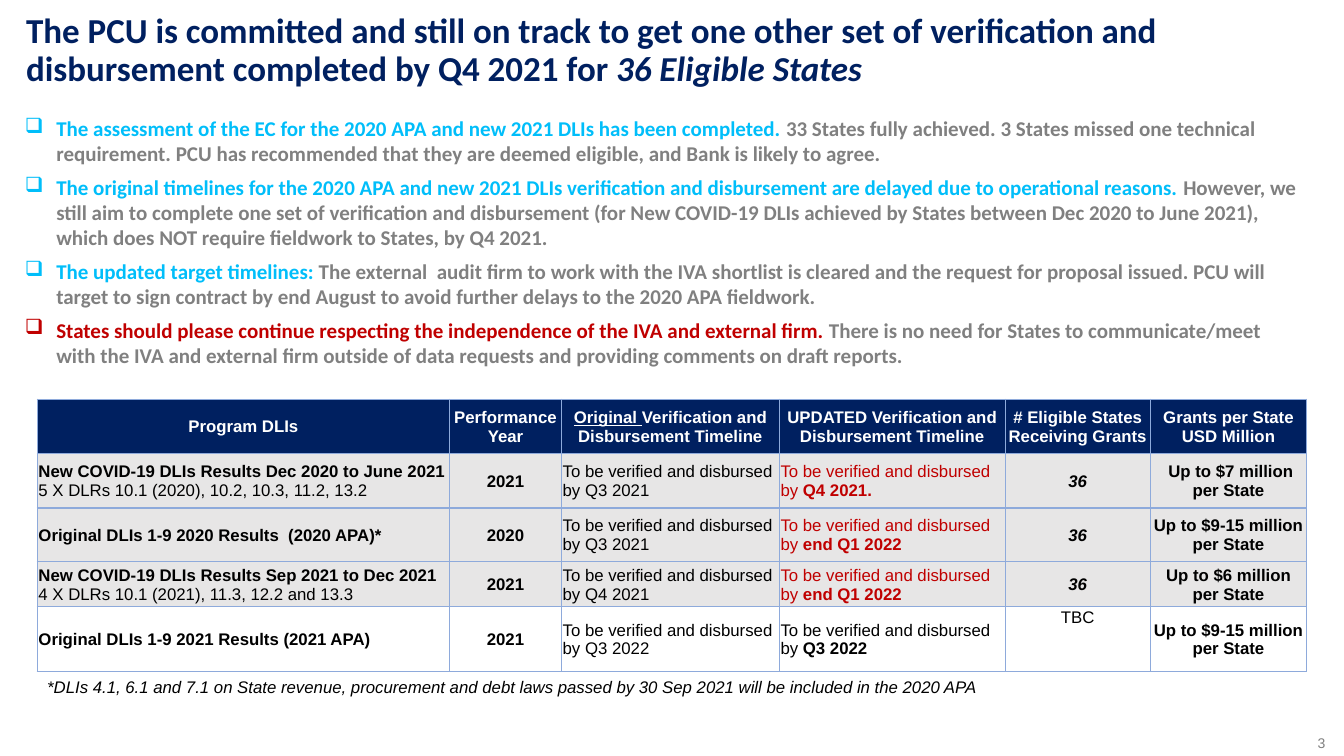
"""Builds the slide on verification and disbursement timelines for eligible States."""
from dataclasses import dataclass
from typing import NamedTuple

from lxml.etree import SubElement
from pptx import Presentation
from pptx.dml.color import RGBColor
from pptx.enum.text import MSO_ANCHOR, MSO_AUTO_SIZE, PP_ALIGN
from pptx.oxml.ns import qn
from pptx.util import Cm, Pt


@dataclass(frozen=True)
class Theme:
    navy: str = "002060"
    sky: str = "00BEFA"
    red: str = "C00000"
    gray: str = "808080"
    black: str = "000000"
    white: str = "FFFFFF"
    band: str = "E7E6E6"
    rule: str = "8EAADB"
    head: str = "Calibri"
    body: str = "Arial"
    title: float = 25
    point: float = 15
    small: float = 12
    page: float = 10


class Run(NamedTuple):
    text: str
    color: str | None = None
    bold: bool | None = None
    italic: bool | None = None
    under: bool | None = None


class Style(NamedTuple):
    font: str
    size: float
    color: str
    bold: bool = False
    italic: bool = False
    align: PP_ALIGN = PP_ALIGN.LEFT


class Box(NamedTuple):
    left: float
    top: float
    width: float
    height: float


class Point(NamedTuple):
    lead: str
    rest: str
    color: str


class Row(NamedTuple):
    name: str
    detail: str
    year: str
    first: str
    update: str
    tint: str
    count: str
    grant: str
    fill: str | None


THEME = Theme()
MARGIN = 0.03
WIDTHS = (10.39, 2.82, 5.49, 5.69, 3.66, 3.94)
HEIGHTS = (1.37, 1.37, 1.35, 1.14, 1.63)
DUE = "To be verified and disbursed by "
HEADS = (
    [Run("Program DLIs")],
    [Run("Performance Year")],
    [Run("Original ", under=True), Run("Verification and Disbursement Timeline")],
    [Run("UPDATED Verification and Disbursement Timeline")],
    [Run("# Eligible States Receiving Grants")],
    [Run("Grants per State USD Million")],
)
ROWS = (
    Row("New COVID-19 DLIs Results Dec 2020 to June 2021",
        "5 X DLRs 10.1 (2020), 10.2, 10.3, 11.2, 13.2", "2021", "Q3 2021",
        "Q4 2021.", THEME.red, "36", " Up to $7 million per State", THEME.band),
    Row("Original DLIs 1-9 2020 Results  (2020 APA)*", "", "2020", "Q3 2021",
        "end Q1 2022", THEME.red, "36", "Up to $9-15 million per State", THEME.band),
    Row("New COVID-19 DLIs Results Sep 2021 to Dec 2021",
        "4 X DLRs 10.1 (2021), 11.3, 12.2 and 13.3", "2021", "Q4 2021",
        "end Q1 2022", THEME.red, "36", "Up to $6 million per State", THEME.band),
    Row("Original DLIs 1-9 2021 Results (2021 APA)", "", "2021", "Q3 2022",
        "Q3 2022", THEME.black, "TBC", "Up to $9-15 million per State", None),
)
POINTS = (
    Point("The assessment of the EC for the 2020 APA and new 2021 DLIs has been completed.",
          " 33 States fully achieved. 3 States missed one technical requirement. PCU has "
          "recommended that they are deemed eligible, and Bank is likely to agree.", THEME.sky),
    Point("The original timelines for the 2020 APA and new 2021 DLIs verification and "
          "disbursement are delayed due to operational reasons. ",
          "However, we still aim to complete one set of verification and disbursement (for New "
          "COVID-19 DLIs achieved by States between Dec 2020 to June 2021), which does NOT "
          "require fieldwork to States, by Q4 2021.", THEME.sky),
    Point("The updated target timelines: ",
          "The external  audit firm to work with the IVA shortlist is cleared and the request "
          "for proposal issued. PCU will target to sign contract by end August to avoid further "
          "delays to the 2020 APA fieldwork.", THEME.sky),
    Point("States should please continue respecting the independence of the IVA and external firm.",
          " There is no need for States to communicate/meet with the IVA and external firm "
          "outside of data requests and providing comments on draft reports.", THEME.red),
)


def write(para, runs: list[Run], style: Style) -> None:
    para.alignment = style.align
    font = para.font
    font.name, font.size = style.font, Pt(style.size)
    font.bold, font.italic = style.bold, style.italic
    font.color.rgb = RGBColor.from_string(style.color)
    for item in runs:
        if item.text == "\n":
            para.add_line_break()
            continue
        run = para.add_run()
        run.text = item.text
        run.font.bold, run.font.italic = item.bold, item.italic
        run.font.underline = item.under
        if item.color:
            run.font.color.rgb = RGBColor.from_string(item.color)


def place(shape, box: Box) -> None:
    shape.left, shape.top, shape.width, shape.height = map(Cm, box)


def inset(frame, size: float) -> None:
    frame.margin_left = frame.margin_right = Cm(size)
    frame.margin_top = frame.margin_bottom = Cm(size)


def add_text(slide, box: Box):
    frame = slide.shapes.add_textbox(*map(Cm, box)).text_frame
    frame.word_wrap = True
    return frame


def add_title(slide) -> None:
    shape = slide.shapes.title
    place(shape, Box(0.66, 0.33, 32.82, 1.93))
    frame = shape.text_frame
    frame.auto_size = MSO_AUTO_SIZE.NONE
    frame.vertical_anchor = MSO_ANCHOR.TOP
    inset(frame, 0)
    para = frame.paragraphs[0]
    para.line_spacing = 0.9
    write(para, [Run("The PCU is committed and still on track to get one other set of "
                     "verification and disbursement completed by Q4 2021 for "),
                 Run("36 Eligible States", italic=True)],
          Style(THEME.head, THEME.title, THEME.navy, True))


def add_points(slide) -> None:
    frame = add_text(slide, Box(0.38, 2.79, 32.54, 6.73))
    for index, point in enumerate(POINTS):
        para = frame.add_paragraph() if index else frame.paragraphs[0]
        props = para._p.get_or_add_pPr()
        props.set("marL", str(Cm(0.79)))
        props.set("indent", str(-Cm(0.79)))
        SubElement(props, qn("a:buChar"), char="❑")
        para.space_after = Pt(6)
        write(para, [Run(point.lead, point.color), Run(point.rest)],
              Style(THEME.head, THEME.point, THEME.gray, True))


def add_rules(cell) -> None:
    props = cell._tc.get_or_add_tcPr()
    for index, side in enumerate(("lnL", "lnR", "lnT", "lnB")):
        line = SubElement(props, qn(f"a:{side}"), w=str(Pt(1)))
        SubElement(SubElement(line, qn("a:solidFill")), qn("a:srgbClr"), val=THEME.rule)
        props.insert(index, line)


def fill_cell(cell, runs: list[Run], style: Style, fill: str | None) -> None:
    inset(cell, MARGIN)
    cell.margin_bottom = 0
    cell.vertical_anchor = MSO_ANCHOR.MIDDLE
    if fill:
        cell.fill.solid()
        cell.fill.fore_color.rgb = RGBColor.from_string(fill)
    else:
        cell.fill.background()
    add_rules(cell)
    write(cell.text_frame.paragraphs[0], runs, style)


def row_runs(row: Row) -> tuple[list[Run], ...]:
    name = [Run(row.name, bold=True)]
    if row.detail:
        name += [Run("\n"), Run(row.detail)]
    known = row.count.isdigit()
    return (name, [Run(row.year, bold=True)], [Run(DUE + row.first)],
            [Run(DUE, row.tint), Run(row.update, row.tint, True)],
            [Run(row.count, bold=known, italic=known)], [Run(row.grant, bold=True)])


def add_grid(slide) -> None:
    frame = slide.shapes.add_table(len(HEIGHTS), len(WIDTHS), Cm(0.94), Cm(10.06),
                                   Cm(sum(WIDTHS)), Cm(sum(HEIGHTS)))
    table = frame.table
    table.first_row = table.horz_banding = False
    for column, width in zip(table.columns, WIDTHS):
        column.width = Cm(width)
    for line, height in zip(table.rows, HEIGHTS):
        line.height = Cm(height)
    center = PP_ALIGN.CENTER
    head = Style(THEME.body, THEME.small, THEME.white, True, align=center)
    plain = Style(THEME.body, THEME.small, THEME.black)
    for col, runs in enumerate(HEADS):
        fill_cell(table.cell(0, col), runs, head, THEME.navy)
    for index, row in enumerate(ROWS, 1):
        for col, runs in enumerate(row_runs(row)):
            style = plain if col in (0, 2, 3) else plain._replace(align=center)
            fill_cell(table.cell(index, col), runs, style, row.fill)
    table.cell(len(ROWS), 4).vertical_anchor = MSO_ANCHOR.TOP


def main() -> None:
    deck = Presentation()
    deck.slide_width, deck.slide_height = Cm(33.87), Cm(19.05)
    slide = deck.slides.add_slide(deck.slide_layouts[5])
    add_title(slide)
    add_points(slide)
    add_grid(slide)
    note = add_text(slide, Box(0.94, 16.92, 30.96, 0.76))
    write(note.paragraphs[0],
          [Run("*DLIs 4.1, 6.1 and 7.1 on State revenue, procurement and debt laws passed by "
               "30 Sep 2021 will be included in the 2020 APA")],
          Style(THEME.body, THEME.small, THEME.black, italic=True))
    page = add_text(slide, Box(32.05, 18.52, 1.35, 0.43))
    inset(page, 0)
    write(page.paragraphs[0], [Run("3")],
          Style(THEME.body, THEME.page, THEME.gray, align=PP_ALIGN.RIGHT))
    deck.save("out.pptx")


if __name__ == "__main__":
    main()
